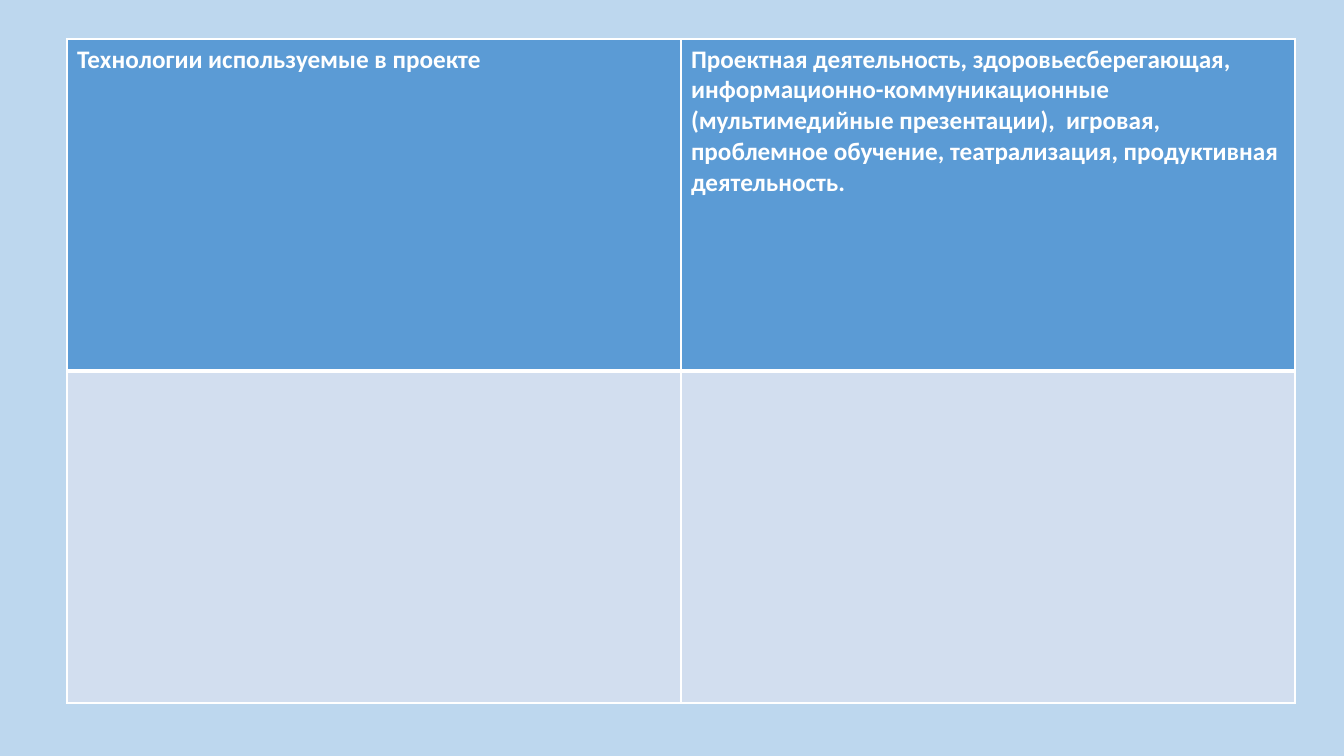
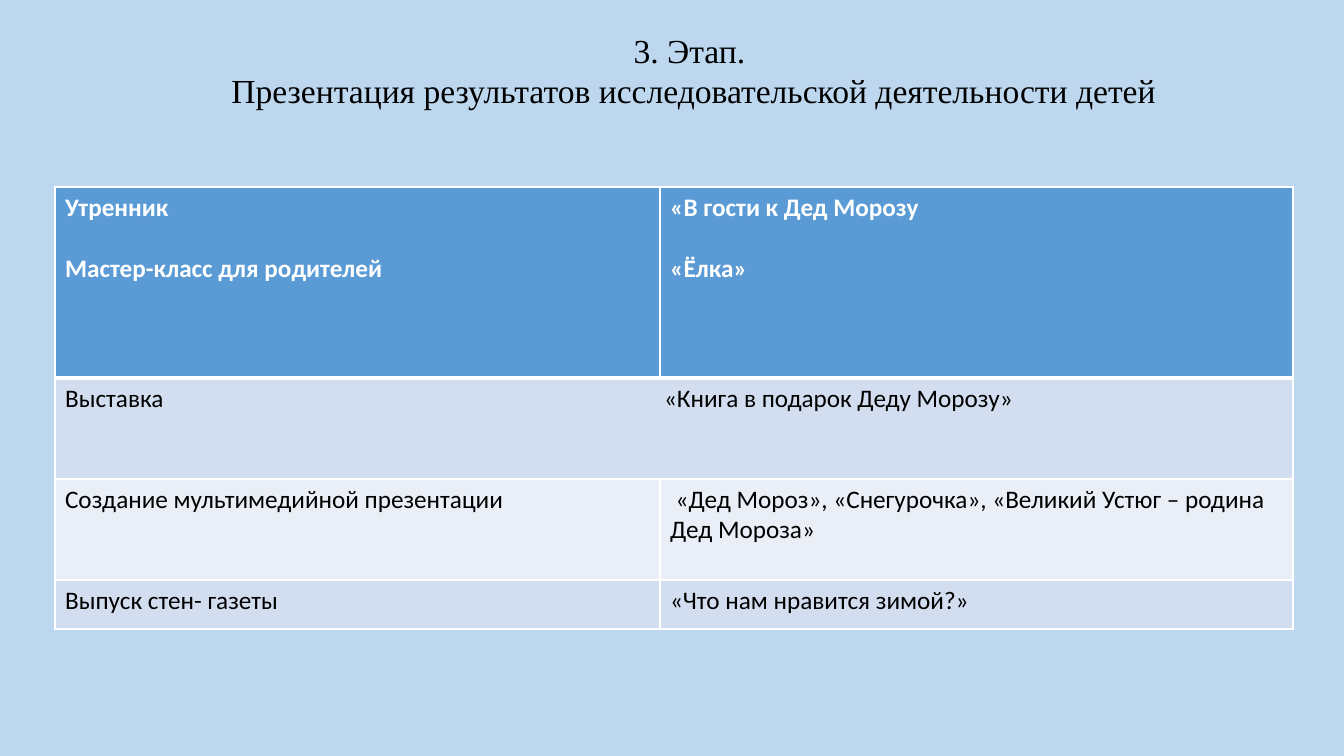
from lxml import etree
from pptx import Presentation
from pptx import util as u
from pptx.dml.color import RGBColor
from pptx.enum import text
from pptx.oxml.ns import qn

SKY = RGBColor(0xBD, 0xD7, 0xEE)
BLUE = RGBColor(0x5B, 0x9B, 0xD5)
BAND_DARK = RGBColor(0xD2, 0xDE, 0xEF)
BAND_LIGHT = RGBColor(0xEA, 0xEF, 0xF7)
WHITE = RGBColor(0xFF, 0xFF, 0xFF)
BLACK = RGBColor(0, 0, 0)
PX = 914400 / 100.8


def px(n):
    return u.Emu(round(n * PX))


def add_grid(slide, left, top, widths, heights, rows):
    table = slide.shapes.add_table(
        len(heights), len(widths), px(left), px(top), px(sum(widths)), px(sum(heights))
    ).table
    table.horz_banding = False
    for column, width in zip(table.columns, widths):
        column.width = px(width)
    for i, (height, row) in enumerate(zip(heights, rows)):
        table.rows[i].height = px(height)
        for j in range(len(widths)):
            cell = table.cell(i, j)
            tc_pr = cell._tc.get_or_add_tcPr()
            for side in "LRTB":
                thick = (i, side) in ((0, "B"), (1, "T"))
                ln = etree.SubElement(tc_pr, qn(f"a:ln{side}"), w=str(u.Pt(3 if thick else 1)))
                fill = etree.SubElement(ln, qn("a:solidFill"))
                etree.SubElement(fill, qn("a:srgbClr"), val=str(WHITE))
            cell.fill.solid()
            cell.fill.fore_color.rgb = BLUE if i == 0 else BAND_DARK if i % 2 else BAND_LIGHT
        if len(row) < len(widths):
            table.cell(i, 0).merge(table.cell(i, len(widths) - 1))
        for j, value in enumerate(row):
            if not value:
                continue
            tf = table.cell(i, j).text_frame
            tf.text = value
            for k, p in enumerate(tf.paragraphs):
                if k:
                    p.space_before = u.Pt(22)
                if "\t" in value:
                    tabs = etree.SubElement(p._p.get_or_add_pPr(), qn("a:tabLst"))
                    etree.SubElement(tabs, qn("a:tab"), pos=str(px(widths[0] - 6)), algn="l")
                for r in p.runs:
                    r.font.name = "Calibri"
                    r.font.size = u.Pt(18)
                    r.font.bold = i == 0
                    r.font.color.rgb = WHITE if i == 0 else BLACK


prs = Presentation()
prs.slide_width, prs.slide_height = px(1344), px(756)
background = prs.slide_master.background.fill
background.solid()
background.fore_color.rgb = SKY

s = prs.slides.add_slide(prs.slide_layouts[6])
add_grid(s, 67, 39, [614, 614], [332, 332], [
    ["Технологии используемые в проекте",
     "Проектная деятельность, здоровьесберегающая, информационно-коммуникационные "
     "(мультимедийные презентации),  игровая, проблемное обучение, театрализация, "
     "продуктивная деятельность."],
    ["", ""],
])

s = prs.slides.add_slide(prs.slide_layouts[5])
title = s.shapes.title
title.left, title.top, title.width, title.height = px(35), px(25), px(1309), px(92)
tf = title.text_frame
tf.text = "3. Этап.\n Презентация результатов исследовательской деятельности детей"
tf.word_wrap = True
tf.auto_size = text.MSO_AUTO_SIZE.NONE
tf.vertical_anchor = text.MSO_ANCHOR.TOP
for p in tf.paragraphs:
    p.alignment = text.PP_ALIGN.CENTER
    for r in p.runs:
        r.font.name = "Times New Roman"
        r.font.size = u.Pt(24)
        r.font.color.rgb = BLACK

add_grid(s, 55, 187, [605, 633], [191, 101, 101, 49], [
    ["Утренник\nМастер-класс для родителей", "«В гости к Дед Морозу\n«Ёлка»"],
    ["Выставка\t«Книга в подарок Деду Морозу»"],
    ["Создание мультимедийной презентации",
     " «Дед Мороз», «Снегурочка», «Великий Устюг – родина Дед Мороза»"],
    ["Выпуск стен- газеты", "«Что нам нравится зимой?»"],
])

prs.save("out.pptx")
